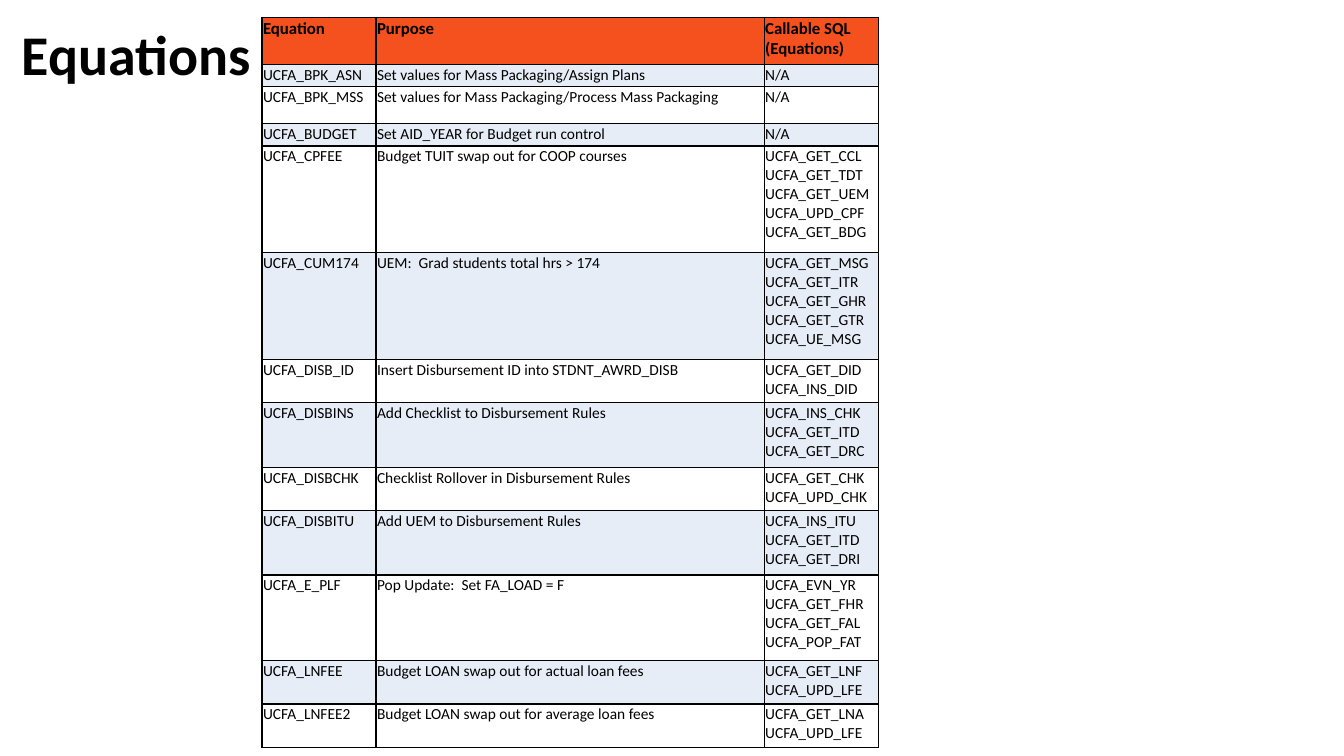
from lxml import etree
from pptx import Presentation
from pptx.dml.color import RGBColor
from pptx.enum.text import MSO_ANCHOR
from pptx.oxml.ns import qn
from pptx.util import Inches, Pt

SLIDE_WIDTH, SLIDE_HEIGHT = Inches(13.33), Inches(7.5)
BLACK = RGBColor(0x00, 0x00, 0x00)
ORANGE = RGBColor(0xF4, 0x51, 0x1E)
PALE_BLUE = RGBColor(0xE7, 0xED, 0xF7)

COLUMN_SHARES = (8.48, 28.88, 8.48)
HEADER_SHARE, LINE_SHARE, ROW_PADDING = 6.27, 2.8, 0.13
HEADINGS = ("Equation", "Purpose", "Callable SQL (Equations)")
EQUATIONS = (
    ("UCFA_BPK_ASN", "Set values for Mass Packaging/Assign Plans", "N/A", 1),
    ("UCFA_BPK_MSS", "Set values for Mass Packaging/Process Mass Packaging", "N/A", 1.71),
    ("UCFA_BUDGET", "Set AID_YEAR for Budget run control", "N/A", 1),
    ("UCFA_CPFEE", "Budget TUIT swap out for COOP courses",
     "UCFA_GET_CCL UCFA_GET_TDT UCFA_GET_UEM UCFA_UPD_CPF UCFA_GET_BDG", 5),
    ("UCFA_CUM174", "UEM:  Grad students total hrs > 174",
     "UCFA_GET_MSG UCFA_GET_ITR UCFA_GET_GHR UCFA_GET_GTR UCFA_UE_MSG", 5),
    ("UCFA_DISB_ID", "Insert Disbursement ID into STDNT_AWRD_DISB",
     "UCFA_GET_DID UCFA_INS_DID", 2),
    ("UCFA_DISBINS", "Add Checklist to Disbursement Rules",
     "UCFA_INS_CHK\nUCFA_GET_ITD\nUCFA_GET_DRC", 3),
    ("UCFA_DISBCHK", "Checklist Rollover in Disbursement Rules",
     "UCFA_GET_CHK UCFA_UPD_CHK", 2),
    ("UCFA_DISBITU", "Add UEM to Disbursement Rules",
     "UCFA_INS_ITU\nUCFA_GET_ITD\nUCFA_GET_DRI", 3),
    ("UCFA_E_PLF", "Pop Update:  Set FA_LOAD = F",
     "UCFA_EVN_YR UCFA_GET_FHR UCFA_GET_FAL UCFA_POP_FAT", 4),
    ("UCFA_LNFEE", "Budget LOAN swap out for actual loan fees",
     "UCFA_GET_LNF UCFA_UPD_LFE", 2),
    ("UCFA_LNFEE2", "Budget LOAN swap out for average loan fees",
     "UCFA_GET_LNA UCFA_UPD_LFE", 2),
)


def across(percent):
    """Return a share of the slide's width."""
    return round(SLIDE_WIDTH * percent / 100)


def down(percent):
    """Return a share of the slide's height."""
    return round(SLIDE_HEIGHT * percent / 100)


def write(frame, text, *, size=11, bold=False, spacing=None):
    """Fill a text frame with one paragraph per line of text."""
    frame.word_wrap = True
    frame.text = text
    for paragraph in frame.paragraphs:
        paragraph.line_spacing = spacing
        for run in paragraph.runs:
            run.font.name = "Calibri"
            run.font.size = Pt(size)
            run.font.bold = bold
            run.font.color.rgb = BLACK


def add_borders(cell, width=Pt(1)):
    """Draw a solid black line on each side of a cell."""
    properties = cell._tc.get_or_add_tcPr()
    for side in ("a:lnL", "a:lnR", "a:lnT", "a:lnB"):
        border = etree.SubElement(properties, qn(side), w=str(width))
        solid = etree.SubElement(border, qn("a:solidFill"))
        etree.SubElement(solid, qn("a:srgbClr"), val=str(BLACK))


def format_cell(cell, text, fill, **style):
    """Set the margins, borders, fill and text of a cell."""
    cell.margin_left = cell.margin_right = cell.margin_top = Inches(0.01)
    cell.margin_bottom = 0
    add_borders(cell)
    if fill is None:
        cell.fill.background()
    else:
        cell.fill.solid()
        cell.fill.fore_color.rgb = fill
    write(cell.text_frame, text, **style)


def add_title(slide):
    """Place the slide's title beside the table."""
    title = slide.shapes.add_textbox(across(0.9), down(1.2), across(22.96), down(12.8))
    title.text_frame.vertical_anchor = MSO_ANCHOR.MIDDLE
    write(title.text_frame, "Equations", size=40, bold=True, spacing=0.9)


def add_equations(slide):
    """Build the table of equations with rows sized by their line counts."""
    heights = [HEADER_SHARE] + [lines * LINE_SHARE + ROW_PADDING for *_, lines in EQUATIONS]
    table = slide.shapes.add_table(
        len(heights), len(HEADINGS), across(19.5), down(2.27),
        across(sum(COLUMN_SHARES)), down(sum(heights))).table
    table.first_row = table.horz_banding = False
    for column, share in zip(table.columns, COLUMN_SHARES):
        column.width = across(share)
    for row, share in zip(table.rows, heights):
        row.height = down(share)
    for cell, heading in zip(table.rows[0].cells, HEADINGS):
        format_cell(cell, heading, ORANGE, size=12, bold=True)
    for number, (*texts, _) in enumerate(EQUATIONS, start=1):
        band = PALE_BLUE if number % 2 else None
        for cell, text in zip(table.rows[number].cells, texts):
            format_cell(cell, text, band)


def main():
    """Create the equations slide and save it."""
    deck = Presentation()
    deck.slide_width, deck.slide_height = SLIDE_WIDTH, SLIDE_HEIGHT
    slide = deck.slides.add_slide(deck.slide_layouts[6])
    add_title(slide)
    add_equations(slide)
    deck.save("out.pptx")


if __name__ == "__main__":
    main()
